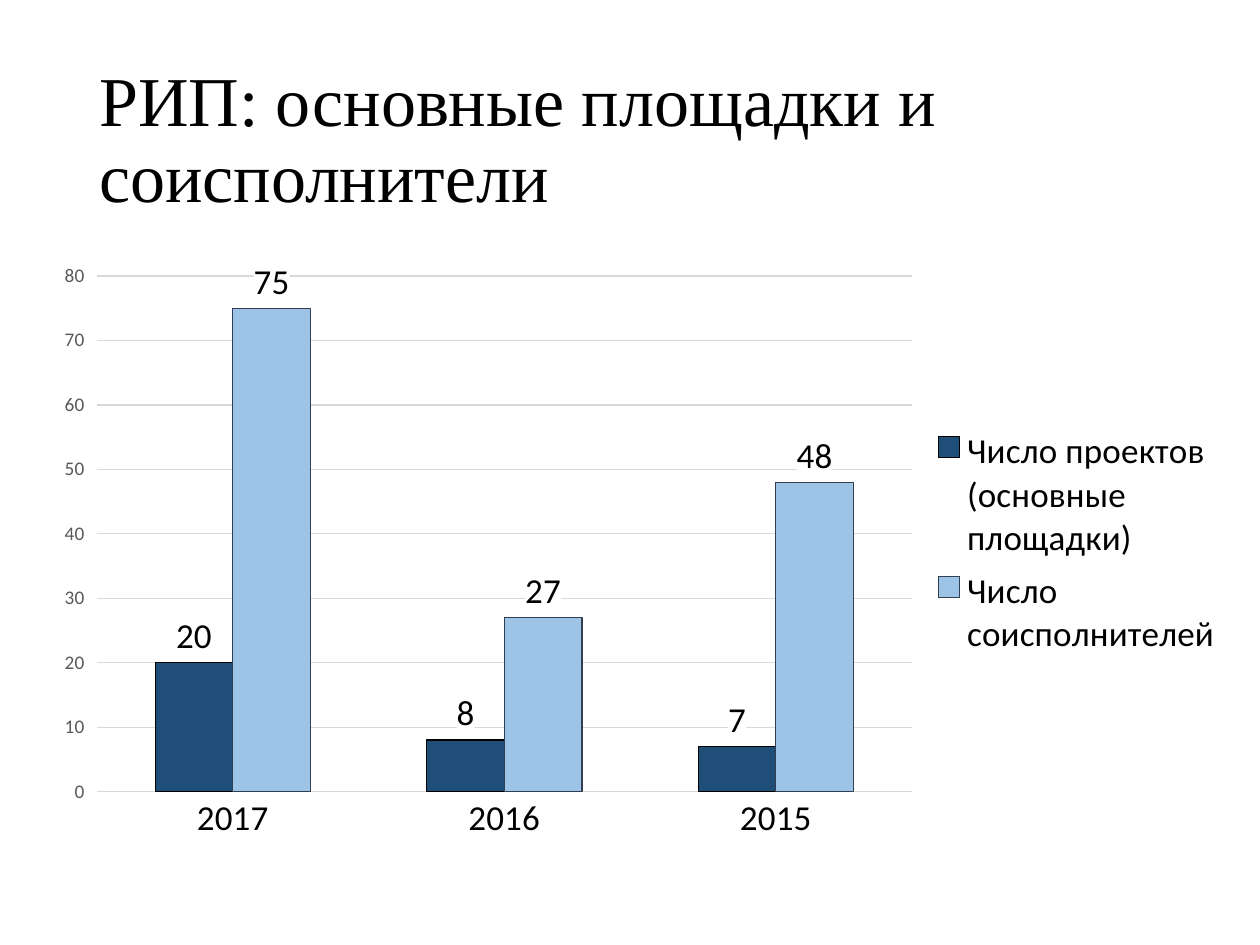
from lxml import etree
from pptx import Presentation
from pptx.chart.data import CategoryChartData
from pptx.dml.color import RGBColor
from pptx.enum.chart import (XL_CHART_TYPE as ChartType, XL_LABEL_POSITION as LabelPosition,
                             XL_LEGEND_POSITION as LegendPosition, XL_TICK_MARK as TickMark)
from pptx.enum.text import MSO_ANCHOR as Anchor, PP_ALIGN as Align
from pptx.oxml import parse_xml
from pptx.oxml.ns import nsdecls, qn
from pptx.util import Pt

# Content
TITLE = "РИП: основные площадки и соисполнители"
YEARS = ["2017", "2016", "2015"]
SERIES = [
    {"name": "Число проектов (основные площадки)", "values": [20, 8, 7],
     "fill": "1F4E79", "line": "000000"},
    {"name": "Число соисполнителей", "values": [75, 27, 48],
     "fill": "9DC3E6", "line": "333F50"},
]

# Theme and geometry (lengths in points, layouts as fractions of the chart)
THEME = {
    "title_font": "Times New Roman", "chart_font": "Calibri",
    "title_size": 40, "chart_size": 20, "scale_size": 11, "line_width": 0.75,
    "text": "000000", "scale": "595959", "grid": "D9D9D9", "paper": "FFFFFF",
}
PAGE_SIZE = (720, 540)
TITLE_BOX = (49.5, 28.8, 621, 104.4)
CHART_BOX = (23.8, 144, 687.6, 342.7)
PLOT_LAYOUT = (0.046, 0.04, 0.677, 0.86)
LEGEND_LAYOUT = (0.725, 0.28, 0.27, 0.41)


def set_font(font, name, size, color):
    font.name, font.size = name, Pt(size)
    font.color.rgb = RGBColor.from_string(color)


def set_line(line, color):
    line.width = Pt(THEME["line_width"])
    line.color.rgb = RGBColor.from_string(color)


def set_layout(part, box, inner=False):
    """Fix the place of a plot area or legend."""
    for old in part.findall(qn("c:layout")):
        part.remove(old)
    layout = parse_xml(f"<c:layout {nsdecls('c')}><c:manualLayout/></c:layout>")
    settings = [("layoutTarget", "inner")] if inner else []
    settings += [("xMode", "edge"), ("yMode", "edge")]
    settings += zip("xywh", box)
    for tag, value in settings:
        etree.SubElement(layout[0], qn(f"c:{tag}")).set("val", str(value))
    # A legend keeps its position element first
    part.insert(0 if inner else 1, layout)


def add_title(page):
    title = page.shapes.title
    title.left, title.top, title.width, title.height = map(Pt, TITLE_BOX)
    frame = title.text_frame
    frame.text = TITLE
    frame.word_wrap = True
    frame.vertical_anchor = Anchor.MIDDLE
    para = frame.paragraphs[0]
    para.alignment = Align.LEFT
    para.line_spacing = 0.9
    set_font(para.font, THEME["title_font"], THEME["title_size"], THEME["text"])


def format_axes(chart):
    years, scale = chart.category_axis, chart.value_axis
    years.major_tick_mark = TickMark.NONE
    set_line(years.format.line, THEME["grid"])
    set_font(years.tick_labels.font, THEME["chart_font"], THEME["chart_size"], THEME["text"])
    scale.minimum_scale, scale.maximum_scale, scale.major_unit = 0, 80, 10
    scale.format.line.fill.background()
    set_line(scale.major_gridlines.format.line, THEME["grid"])
    set_font(scale.tick_labels.font, THEME["chart_font"], THEME["scale_size"], THEME["scale"])


def format_series(series, style):
    series.format.fill.solid()
    series.format.fill.fore_color.rgb = RGBColor.from_string(style["fill"])
    set_line(series.format.line, style["line"])
    labels = series.data_labels
    labels.show_value = True
    labels.position = LabelPosition.OUTSIDE_END
    set_font(labels.font, THEME["chart_font"], THEME["chart_size"], THEME["text"])
    # White backing keeps gridlines off the numbers
    backing = parse_xml(
        f"<c:spPr {nsdecls('c', 'a')}><a:solidFill>"
        f"<a:srgbClr val=\"{THEME['paper']}\"/></a:solidFill></c:spPr>")
    series._element.find(qn("c:dLbls")).find(qn("c:txPr")).addprevious(backing)


def add_chart(page):
    table = CategoryChartData()
    table.categories = YEARS
    for item in SERIES:
        table.add_series(item["name"], item["values"])
    chart = page.shapes.add_chart(
        ChartType.COLUMN_CLUSTERED, *map(Pt, CHART_BOX), table).chart
    set_font(chart.font, THEME["chart_font"], THEME["chart_size"], THEME["text"])
    chart.has_title = False
    format_axes(chart)

    # Columns
    plot = chart.plots[0]
    plot.gap_width, plot.overlap = 150, 0
    plot.vary_by_categories = False
    for series, style in zip(plot.series, SERIES):
        format_series(series, style)

    # Legend
    chart.has_legend = True
    legend = chart.legend
    legend.position = LegendPosition.RIGHT
    legend.include_in_layout = False
    set_font(legend.font, THEME["chart_font"], THEME["chart_size"], THEME["text"])
    set_layout(chart._chartSpace.chart.plotArea, PLOT_LAYOUT, inner=True)
    set_layout(legend._element, LEGEND_LAYOUT)


def main():
    deck = Presentation()
    deck.slide_width, deck.slide_height = map(Pt, PAGE_SIZE)
    page = deck.slides.add_slide(deck.slide_layouts[5])
    add_title(page)
    add_chart(page)
    deck.save("out.pptx")


if __name__ == "__main__":
    main()
